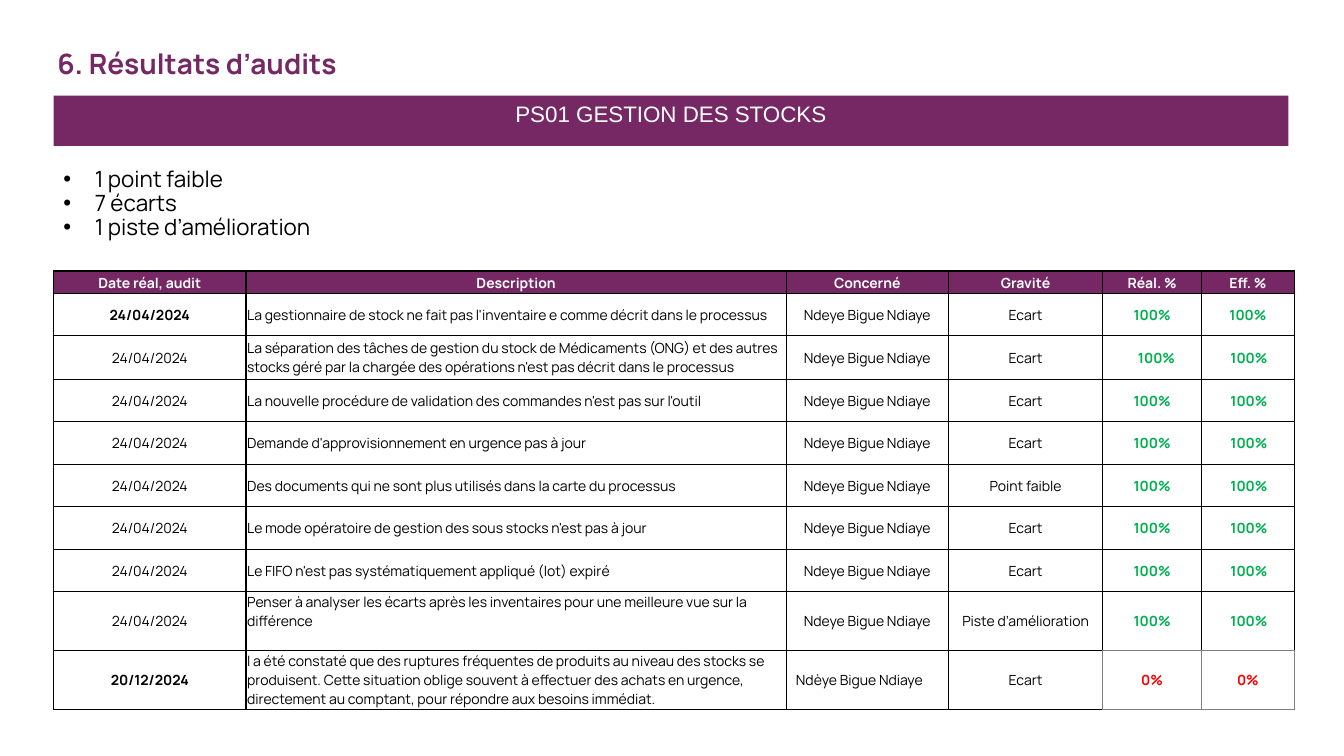
"""Build the audit results slide for the stock management process."""
from dataclasses import dataclass

from lxml import etree
from pptx import Presentation
from pptx.dml.color import RGBColor
from pptx.enum import shapes, text
from pptx.oxml.ns import qn
from pptx.util import Cm, Pt

TITLE = "6. Résultats d’audits"
BANNER = "PS01 GESTION DES STOCKS"
SUMMARY = ["1 point faible", "7 écarts", "1 piste d’amélioration"]
HEADER = ("Date réal, audit", "Description", "Concerné", "Gravité", "Réal. %", "Eff. %")
FIRST, LAST = "24/04/2024", "20/12/2024"
OWNER = "Ndeye Bigue Ndiaye"
FINDINGS = [
    (FIRST, "La gestionnaire de stock ne fait pas l'inventaire e comme décrit dans le processus",
     OWNER, "Ecart", "100%", "100%"),
    (FIRST, "La séparation des tâches de gestion du stock de Médicaments (ONG) et des autres "
     "stocks géré par la chargée des opérations n'est pas décrit dans le processus",
     OWNER, "Ecart", "100%", "100%"),
    (FIRST, "La nouvelle procédure de validation des commandes n'est pas sur l'outil",
     OWNER, "Ecart", "100%", "100%"),
    (FIRST, "Demande d'approvisionnement en urgence pas à jour", OWNER, "Ecart", "100%", "100%"),
    (FIRST, "Des documents qui ne sont plus utilisés dans la carte du processus",
     OWNER, "Point faible", "100%", "100%"),
    (FIRST, "Le mode opératoire de gestion des sous stocks n'est pas à jour",
     OWNER, "Ecart", "100%", "100%"),
    (FIRST, "Le FIFO n'est pas systématiquement appliqué (lot) expiré",
     OWNER, "Ecart", "100%", "100%"),
    (FIRST, "Penser à analyser les écarts après les inventaires pour une meilleure vue sur la "
     "différence", OWNER, "Piste d’amélioration", "100%", "100%"),
    (LAST, "l a été constaté que des ruptures fréquentes de produits au niveau des stocks se "
     "produisent. Cette situation oblige souvent à effectuer des achats en urgence, "
     "directement au comptant, pour répondre aux besoins immédiat.",
     "Ndèye Bigue Ndiaye", "Ecart", "0%", "0%"),
]
COLUMN_WIDTHS = (4.85, 13.61, 4.09, 3.89, 2.49, 2.34)
ROW_HEIGHTS = (0.56, 1.07, 1.1, *[1.07] * 5, 1.48, 1.48)
BOLD_DATE_ROWS = (1, 9)
LEFT_INSETS = {(2, 4): 0.25, (9, 2): 0.25, **{(row, 5): 0.08 for row in range(2, 9)}}
BOTTOM_INSETS = {(8, 1): 0.48}


@dataclass(frozen=True)
class Theme:
    """Colours, fonts and type sizes."""
    plum: str = "752864"
    black: str = "000000"
    white: str = "FFFFFF"
    grey: str = "808080"
    green: str = "00B050"
    red: str = "FF0000"
    body: str = "Manrope"
    banner: str = "Arial"
    title_size: int = 20
    text_size: int = 16
    table_size: int = 10


THEME = Theme()


def style(para, size, color, font=THEME.body, bold=False, align=text.PP_ALIGN.LEFT):
    """Format a whole paragraph."""
    para.alignment = align
    para.font.name, para.font.size, para.font.bold = font, Pt(size), bold
    para.font.color.rgb = RGBColor.from_string(color)


def add_child(parent, tag, **attributes):
    """Append a drawing element."""
    return etree.SubElement(parent, qn(tag), attributes)


def add_title(page):
    """Place the slide title."""
    title = page.shapes.title
    title.left, title.top, title.width, title.height = Cm(1.19), Cm(0.91), Cm(31.29), Cm(1.37)
    title.text_frame.text = TITLE
    title.text_frame.vertical_anchor = text.MSO_ANCHOR.MIDDLE
    style(title.text_frame.paragraphs[0], THEME.title_size, THEME.plum, bold=True)


def add_banner(page):
    """Draw the process name band."""
    banner = page.shapes.add_shape(
        shapes.MSO_SHAPE.RECTANGLE, Cm(1.35), Cm(2.41), Cm(31.12), Cm(1.27))
    banner.shadow.inherit = False
    banner.fill.solid()
    banner.fill.fore_color.rgb = RGBColor.from_string(THEME.plum)
    banner.line.fill.background()
    banner.text_frame.text = BANNER
    banner.text_frame.vertical_anchor = text.MSO_ANCHOR.TOP
    style(banner.text_frame.paragraphs[0], THEME.text_size, THEME.white, THEME.banner,
          align=text.PP_ALIGN.CENTER)


def add_summary(page):
    """List the counts of findings."""
    box = page.shapes.add_textbox(Cm(1.35), Cm(4.11), Cm(11.18), Cm(2.31))
    box.text_frame.word_wrap = True
    box.text_frame.text = "\n".join(SUMMARY)
    for para in box.text_frame.paragraphs:
        properties = para._p.get_or_add_pPr()
        properties.set("marL", str(Cm(0.79)))
        properties.set("indent", str(-Cm(0.79)))
        add_child(add_child(properties, "a:buClr"), "a:srgbClr", val=THEME.black)
        add_child(properties, "a:buFont", typeface=THEME.banner)
        add_child(properties, "a:buChar", char="•")
        para.line_spacing = 0.9
        style(para, THEME.text_size, THEME.black)


def set_borders(cell, row, column):
    """Draw the four cell edges, grey around the open finding's rates."""
    last = len(FINDINGS)
    open_rate = row == last and column >= 4
    edges = {
        "a:lnL": (1 if column < 2 else 0.75, open_rate),
        "a:lnR": (1 if column in (0, 5) else 0.75, row == last and column >= 3),
        "a:lnT": (1, open_rate),
        "a:lnB": (1, row >= last - 1 and column >= 4),
    }
    for tag, (width, is_grey) in edges.items():
        line = add_child(cell._tc.get_or_add_tcPr(), tag, w=str(Pt(width)))
        add_child(add_child(line, "a:solidFill"), "a:srgbClr",
                  val=THEME.grey if is_grey else THEME.black)


def fill_cell(cell, row, column, words):
    """Write and format one table cell."""
    set_borders(cell, row, column)
    cell.margin_left = Cm(LEFT_INSETS.get((row, column), 0.03))
    cell.margin_right = cell.margin_top = Cm(0.03)
    cell.margin_bottom = Cm(BOTTOM_INSETS.get((row, column), 0))
    cell.vertical_anchor = text.MSO_ANCHOR.MIDDLE
    color, bold = THEME.black, column == 0 and row in BOLD_DATE_ROWS
    if row == 0:
        cell.fill.solid()
        cell.fill.fore_color.rgb = RGBColor.from_string(THEME.plum)
        color, bold = THEME.white, True
    else:
        cell.fill.background()
        if column >= 4:
            color, bold = THEME.red if words == "0%" else THEME.green, True
    is_left = row > 0 and column == 1 or (row, column) == (len(FINDINGS), 2)
    cell.text_frame.text = words
    style(cell.text_frame.paragraphs[0], THEME.table_size, color, bold=bold,
          align=text.PP_ALIGN.LEFT if is_left else text.PP_ALIGN.CENTER)


def add_findings(page):
    """Build the table of findings."""
    rows = [HEADER, *FINDINGS]
    table = page.shapes.add_table(
        len(rows), len(HEADER), Cm(1.35), Cm(6.83),
        Cm(sum(COLUMN_WIDTHS)), Cm(sum(ROW_HEIGHTS))).table
    table.horz_banding = False
    for column, width in zip(table.columns, COLUMN_WIDTHS):
        column.width = Cm(width)
    for row, (height, entries) in enumerate(zip(ROW_HEIGHTS, rows)):
        table.rows[row].height = Cm(height)
        for column, words in enumerate(entries):
            fill_cell(table.cell(row, column), row, column, words)


def main():
    """Assemble and save the deck."""
    deck = Presentation()
    deck.slide_width, deck.slide_height = Cm(33.87), Cm(19.05)
    page = deck.slides.add_slide(deck.slide_layouts[5])
    add_title(page)
    add_banner(page)
    add_findings(page)
    add_summary(page)
    deck.save("out.pptx")


if __name__ == "__main__":
    main()
